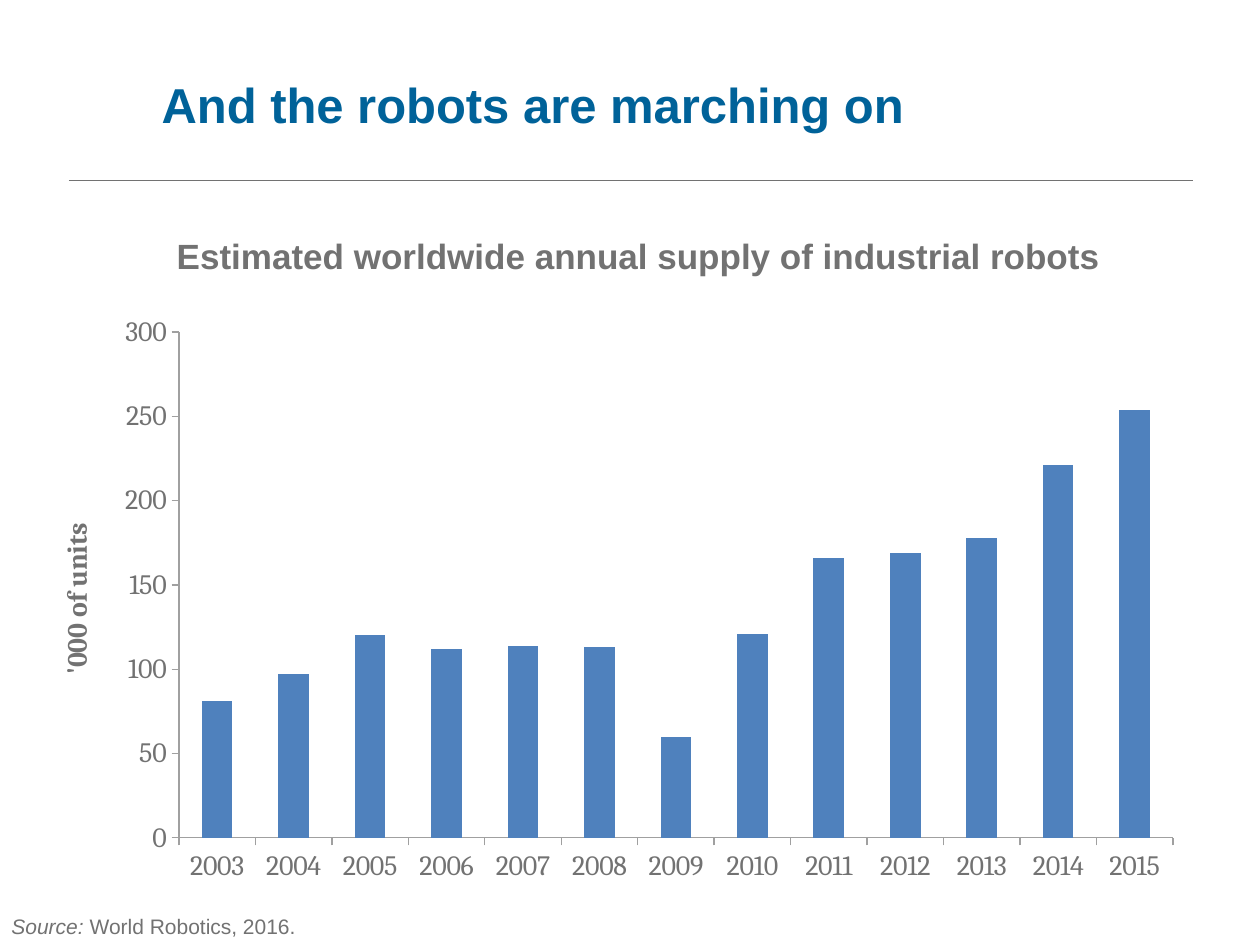
from dataclasses import dataclass

import pptx
import pptx.chart.data
import pptx.dml.color
import pptx.enum.chart
import pptx.enum.shapes
import pptx.enum.text
import pptx.oxml
import pptx.oxml.ns
import pptx.util

SCALE = 914400 / 126
GREY, BLUE, BAR = "727272", "006299", "4F81BD"
ALIGN = pptx.enum.text.PP_ALIGN
TICK = pptx.enum.chart.XL_TICK_MARK
YEARS = [str(year) for year in range(2003, 2016)]
UNITS = [81, 97, 120, 112, 114, 113, 60, 121, 166, 169, 178, 221, 254]


@dataclass
class Box:
    left: int
    top: int
    width: int
    height: int

    def emu(self) -> list[int]:
        return [px(n) for n in (self.left, self.top, self.width, self.height)]


@dataclass
class Run:
    text: str
    size: int
    color: str = GREY
    bold: bool = False
    italic: bool = False


@dataclass
class Label:
    box: Box
    runs: list[Run]
    align: ALIGN = ALIGN.LEFT


def px(n: int) -> int:
    return round(n * SCALE)


def rgb(code: str) -> pptx.dml.color.RGBColor:
    return pptx.dml.color.RGBColor.from_string(code)


def style(font, name: str, size: int, color: str, bold=False, italic=False) -> None:
    font.name, font.size = name, pptx.util.Pt(size)
    font.bold, font.italic = bold, italic
    font.color.rgb = rgb(color)


def write(frame, runs: list[Run], align: ALIGN) -> None:
    para = frame.paragraphs[0]
    para.alignment = align
    for item in runs:
        run = para.add_run()
        run.text = item.text
        style(run.font, "Arial", item.size, item.color, item.bold, item.italic)


def add_head(slide, label: Label) -> None:
    title = slide.shapes.title
    title.left, title.top, title.width, title.height = label.box.emu()
    title.text_frame.vertical_anchor = pptx.enum.text.MSO_ANCHOR.MIDDLE
    write(title.text_frame, label.runs, label.align)


def add_label(slide, label: Label) -> None:
    frame = slide.shapes.add_textbox(*label.box.emu()).text_frame
    frame.word_wrap = False
    frame.auto_size = pptx.enum.text.MSO_AUTO_SIZE.SHAPE_TO_FIT_TEXT
    write(frame, label.runs, label.align)


def add_rule(slide, left: int, right: int, y: int) -> None:
    rule = slide.shapes.add_connector(
        pptx.enum.shapes.MSO_CONNECTOR.STRAIGHT, px(left), px(y), px(right), px(y))
    rule.line.color.rgb = rgb(GREY)
    rule.line.width = pptx.util.Pt(0.5)
    props = rule._element.spPr
    props.append(props.makeelement(pptx.oxml.ns.qn("a:effectLst"), {}))


def fix_plot(chart, outer: Box, inner: Box) -> None:
    """Pin the inner plot area at a fixed place within the chart."""
    area = chart._chartSpace.chart.plotArea
    for old in area.findall(pptx.oxml.ns.qn("c:layout")):
        area.remove(old)
    parts = {
        "x": (inner.left - outer.left) / outer.width,
        "y": (inner.top - outer.top) / outer.height,
        "w": inner.width / outer.width,
        "h": inner.height / outer.height,
    }
    modes = '<c:xMode val="edge"/><c:yMode val="edge"/>'
    sizes = "".join(f'<c:{key} val="{val:.4f}"/>' for key, val in parts.items())
    area.insert(0, pptx.oxml.parse_xml(
        f'<c:layout {pptx.oxml.ns.nsdecls("c")}><c:manualLayout>'
        f'<c:layoutTarget val="inner"/>{modes}{sizes}</c:manualLayout></c:layout>'))


def add_bars(slide, outer: Box, inner: Box) -> None:
    data = pptx.chart.data.CategoryChartData()
    data.categories = YEARS
    data.add_series("Series 1", UNITS)
    kind = pptx.enum.chart.XL_CHART_TYPE.COLUMN_CLUSTERED
    chart = slide.shapes.add_chart(kind, *outer.emu(), data).chart
    chart.has_legend = chart.has_title = False
    style(chart.font, "Cambria", 16, GREY)
    plot = chart.plots[0]
    plot.gap_width, plot.vary_by_categories = 150, False
    fill = plot.series[0].format.fill
    fill.solid()
    fill.fore_color.rgb = rgb(BAR)
    for axis in (chart.category_axis, chart.value_axis):
        axis.has_major_gridlines = False
        axis.major_tick_mark, axis.minor_tick_mark = TICK.OUTSIDE, TICK.NONE
        axis.format.line.color.rgb = rgb("A0A0A0")
        axis.format.line.width = pptx.util.Pt(0.75)
    scale = chart.value_axis
    scale.minimum_scale, scale.maximum_scale, scale.major_unit = 0, 300, 50
    run = scale.axis_title.text_frame.paragraphs[0].add_run()
    run.text = "'000 of units"
    style(run.font, "Cambria", 16, GREY, bold=True)
    fix_plot(chart, outer, inner)


def main() -> None:
    deck = pptx.Presentation()
    deck.slide_width, deck.slide_height = px(1260), px(945)
    slide = deck.slides.add_slide(deck.slide_layouts[5])
    add_rule(slide, 69, 1193, 180)
    add_head(slide, Label(Box(149, 33, 1022, 141), [
        Run("And the robots are marching on", 28, BLUE, bold=True)]))
    add_label(slide, Label(Box(161, 228, 955, 55), [
        Run("Estimated worldwide annual supply of industrial robots", 20, bold=True),
    ], ALIGN.CENTER))
    add_label(slide, Label(Box(-1, 907, 324, 38), [
        Run("Source: ", 12, italic=True), Run("World Robotics, 2016.", 12)]))
    add_bars(slide, Box(31, 305, 1166, 590), Box(179, 332, 994, 506))
    deck.save("out.pptx")


if __name__ == "__main__":
    main()
